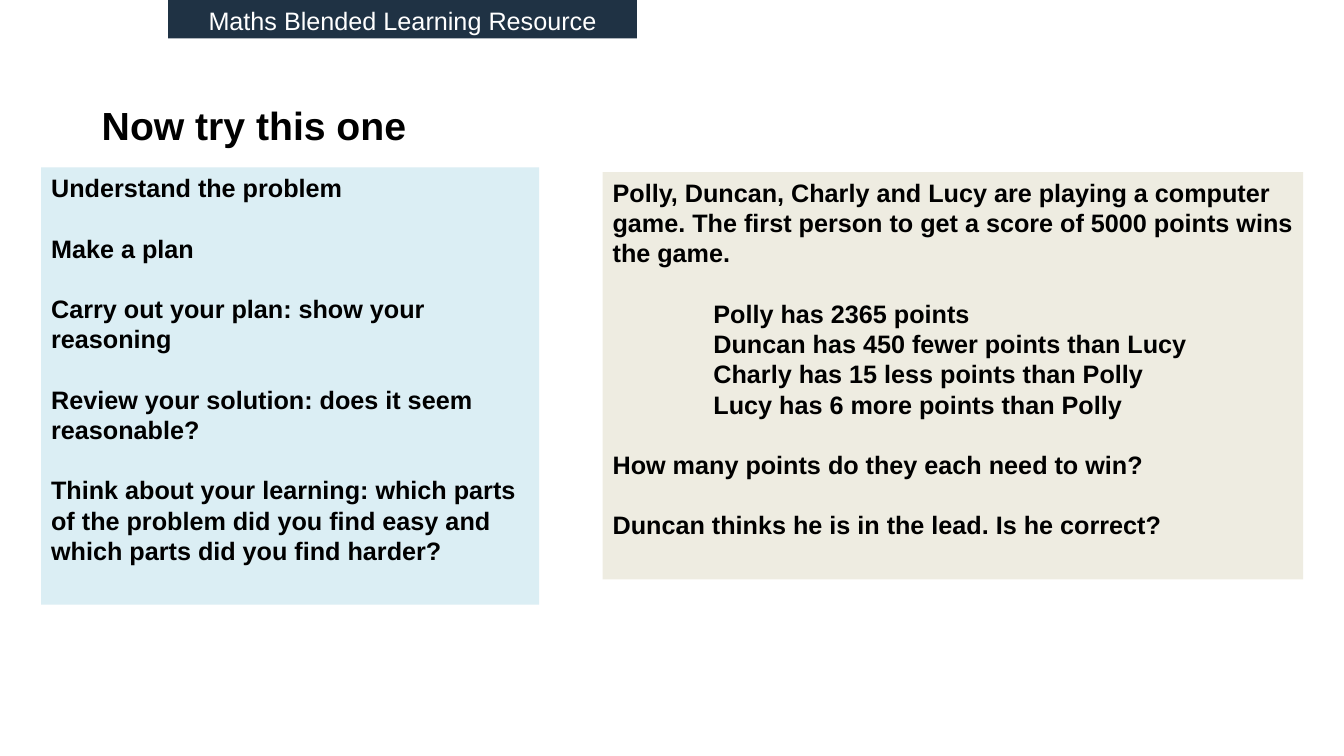
from pptx import Presentation
from pptx.dml.color import RGBColor
from pptx.enum.shapes import MSO_SHAPE
from pptx.enum.text import MSO_ANCHOR, PP_ALIGN
from pptx.util import Cm, Pt

BLACK = RGBColor(0x00, 0x00, 0x00)
WHITE = RGBColor(0xFF, 0xFF, 0xFF)
NAVY = RGBColor(0x1F, 0x32, 0x44)
PALE_BLUE = RGBColor(0xDB, 0xEE, 0xF4)
CREAM = RGBColor(0xEE, 0xEC, 0xE1)

LINE_HEIGHT = Pt(21.6)
SCORE_INDENT = Cm(2.54)

STEPS = [
    "Understand the problem",
    "Make a plan",
    "Carry out your plan: show your reasoning",
    "Review your solution: does it seem reasonable?",
    "Think about your learning: which parts of the problem did you find easy "
    "and which parts did you find harder?",
]
INTRODUCTION = (
    "Polly, Duncan, Charly and Lucy are playing a computer game. "
    "The first person to get a score of 5000 points wins the game."
)
SCORES = [
    "Polly has 2365 points",
    "Duncan has 450 fewer points than Lucy",
    "Charly has 15 less points than Polly",
    "Lucy has 6 more points than Polly",
]
QUESTIONS = [
    "How many points do they each need to win?",
    "Duncan thinks he is in the lead. Is he correct?",
]


def add_run(paragraph, text, size, color, bold):
    run = paragraph.add_run()
    run.text = text
    run.font.name = "Arial"
    run.font.size = Pt(size)
    run.font.bold = bold
    run.font.color.rgb = color


def add_panel(slide, left, top, width, height, fill):
    shape = slide.shapes.add_shape(
        MSO_SHAPE.RECTANGLE, Cm(left), Cm(top), Cm(width), Cm(height))
    shape.shadow.inherit = False
    shape.fill.solid()
    shape.fill.fore_color.rgb = fill
    shape.line.fill.background()
    shape.text_frame.word_wrap = True
    shape.text_frame.vertical_anchor = MSO_ANCHOR.TOP
    return shape.text_frame


def add_text(frame, text, color=BLACK, bold=True, gap=False, indented=False,
             alignment=PP_ALIGN.LEFT):
    """Fill the first paragraph, then append; a gap is one line high."""
    paragraph = frame.paragraphs[0]
    if paragraph.runs:
        paragraph = frame.add_paragraph()
        paragraph.space_before = LINE_HEIGHT if gap else Pt(0)
    if indented:
        paragraph._p.get_or_add_pPr().set("marL", str(SCORE_INDENT))
    paragraph.alignment = alignment
    paragraph.line_spacing = LINE_HEIGHT
    add_run(paragraph, text, 18, color, bold)


def set_title(slide, text):
    title = slide.shapes.title
    title.left, title.top = Cm(2.31), Cm(2.34)
    title.width, title.height = Cm(22.86), Cm(1.63)
    title.text_frame.vertical_anchor = MSO_ANCHOR.MIDDLE
    paragraph = title.text_frame.paragraphs[0]
    paragraph.alignment = PP_ALIGN.LEFT
    add_run(paragraph, text, 28, BLACK, True)


def main():
    presentation = Presentation()
    presentation.slide_width = Cm(33.87)
    presentation.slide_height = Cm(19.05)
    slide = presentation.slides.add_slide(presentation.slide_layouts[5])

    set_title(slide, "Now try this one")

    # Problem-solving steps
    steps = add_panel(slide, 1.04, 4.22, 12.55, 11.02, PALE_BLUE)
    for step in STEPS:
        add_text(steps, step, gap=True)

    # Resource banner
    banner = add_panel(slide, 4.24, 0, 11.81, 0.97, NAVY)
    add_text(banner, "Maths Blended Learning Resource", WHITE, bold=False,
             alignment=PP_ALIGN.CENTER)

    # The problem
    problem = add_panel(slide, 15.19, 4.34, 17.65, 10.26, CREAM)
    add_text(problem, INTRODUCTION)
    for score in SCORES:
        add_text(problem, score, gap=score == SCORES[0], indented=True)
    for question in QUESTIONS:
        add_text(problem, question, gap=True)

    presentation.save("out.pptx")


if __name__ == "__main__":
    main()
